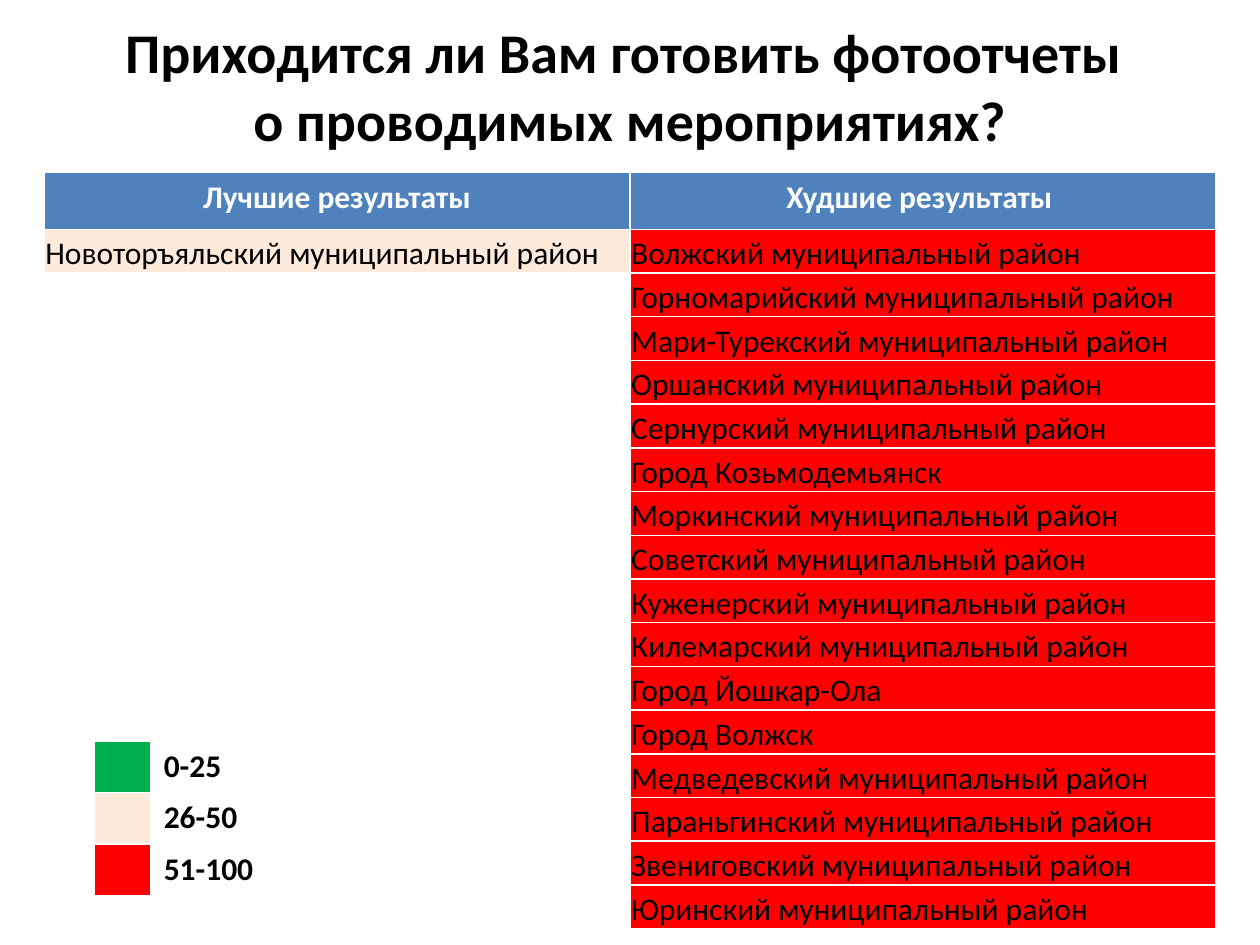
from dataclasses import dataclass

from pptx import Presentation
from pptx.dml.color import RGBColor
from pptx.enum.text import MSO_ANCHOR as Anchor, PP_ALIGN as Align
from pptx.util import Inches, Pt

COLORS = {
    "black": "000000", "white": "FFFFFF", "blue": "4F81BD",
    "green": "00B050", "cream": "FDEADA", "red": "FF0000",
}
FONT = "Calibri"


@dataclass
class Cell:
    text: str = ""
    fill: str = "white"
    ink: str = "black"
    bold: bool = False
    tight: bool = False
    align: Align = Align.LEFT


def style(para, size: float, ink: str, bold: bool, align: Align) -> None:
    para.alignment = align
    font = para.font
    font.name, font.size, font.bold = FONT, Pt(size), bold
    font.color.rgb = RGBColor.from_string(COLORS[ink])


def fill_cell(cell, data: Cell) -> None:
    cell.text = data.text
    cell.fill.solid()
    cell.fill.fore_color.rgb = RGBColor.from_string(COLORS[data.fill])
    style(cell.text_frame.paragraphs[0], 18, data.ink, data.bold, data.align)
    if data.tight:
        cell.vertical_anchor = Anchor.BOTTOM
        cell.margin_left = cell.margin_right = cell.margin_top = Inches(0.01)
        cell.margin_bottom = 0


def add_grid(slide, left: float, top: float, cols: list[float],
             heights: list[float], rows: list[list[Cell]]) -> None:
    table = slide.shapes.add_table(
        len(rows), len(cols), Inches(left), Inches(top),
        Inches(sum(cols)), Inches(sum(heights))).table
    table.horz_banding = False
    for col, width in zip(table.columns, cols):
        col.width = Inches(width)
    for row, height, cells in zip(table.rows, heights, rows):
        row.height = Inches(height)
        for cell, data in zip(row.cells, cells):
            fill_cell(cell, data)


HEADS = ["Лучшие результаты", "Худшие результаты "]
DISTRICT = " муниципальный район"
BEST = ["Новоторъяльский" + DISTRICT]
WORST = [
    name if name.startswith("Город") else name + DISTRICT
    for name in [
        "Волжский", "Горномарийский", "Мари-Турекский", "Оршанский",
        "Сернурский", "Город Козьмодемьянск", "Моркинский", "Советский",
        "Куженерский", "Килемарский", "Город Йошкар-Ола", "Город Волжск",
        "Медведевский", "Параньгинский", "Звениговский", "Юринский",
    ]
]
LEGEND = [("green", "0-25"), ("cream", "26-50"), ("red", "51-100")]


def main() -> None:
    deck = Presentation()
    deck.slide_width, deck.slide_height = Inches(10), Inches(7.5)
    slide = deck.slides.add_slide(deck.slide_layouts[5])

    # Title
    title = slide.shapes.title
    title.left, title.top = Inches(0), Inches(0.05)
    title.width, title.height = Inches(10), Inches(1.25)
    frame = title.text_frame
    frame.text = ("Приходится ли Вам готовить фотоотчеты \v"
                  "о проводимых мероприятиях?")
    frame.vertical_anchor = Anchor.MIDDLE
    style(frame.paragraphs[0], 32, "black", True, Align.CENTER)

    # Results
    rows = [[Cell(head, "blue", "white", True, align=Align.CENTER)
             for head in HEADS]]
    for i, worst in enumerate(WORST):
        best = (Cell(BEST[i], "cream", tight=True) if i < len(BEST)
                else Cell(tight=True))
        rows.append([best, Cell(worst, "red", tight=True)])
    add_grid(slide, 0.35, 1.37, [4.65, 4.65],
             [0.45] + [0.347] * len(WORST), rows)

    # Legend
    keys = [[Cell(fill=color), Cell(label, bold=True)]
            for color, label in LEGEND]
    add_grid(slide, 0.75, 5.88, [0.45, 1.6], [0.41] * len(LEGEND), keys)

    deck.save("out.pptx")


if __name__ == "__main__":
    main()
